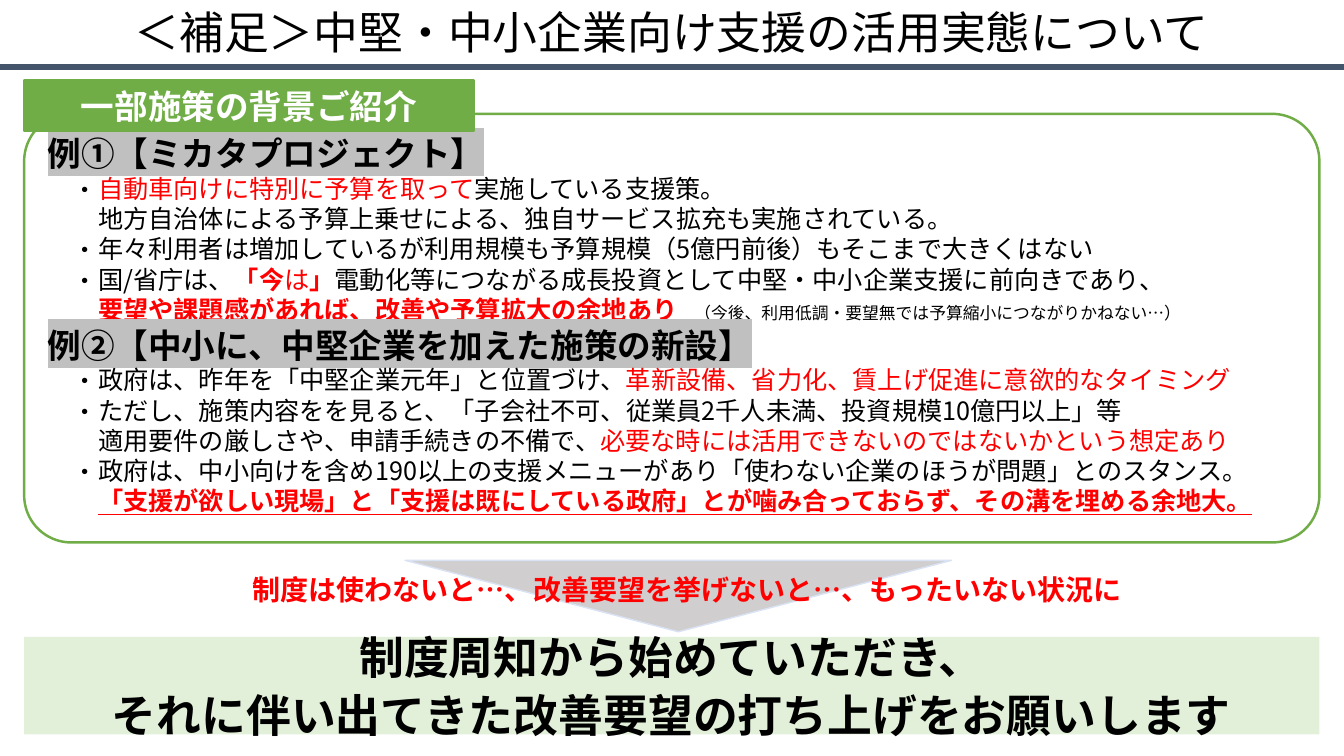
from lxml import etree
from pptx import Presentation
from pptx.dml.color import RGBColor
from pptx.enum.shapes import MSO_CONNECTOR, MSO_SHAPE
from pptx.enum.text import MSO_ANCHOR, MSO_AUTO_SIZE, PP_ALIGN
from pptx.oxml.ns import qn
from pptx.util import Cm, Pt

STRAIGHT = MSO_CONNECTOR.STRAIGHT
RECTANGLE = MSO_SHAPE.RECTANGLE
ROUNDED = MSO_SHAPE.ROUNDED_RECTANGLE
TRIANGLE = MSO_SHAPE.ISOSCELES_TRIANGLE
TOP, MIDDLE = MSO_ANCHOR.TOP, MSO_ANCHOR.MIDDLE
NO_AUTOFIT = MSO_AUTO_SIZE.NONE
LEFT, CENTER = PP_ALIGN.LEFT, PP_ALIGN.CENTER

FONT = "Noto Sans CJK JP"
COLORS = {
    "black": "000000", "white": "FFFFFF", "red": "FF0000", "green": "70AD47",
    "pale_green": "E2F0D9", "gray": "D0CECE", "pale_blue": "DAE3F3",
    "navy": "44546A", "marker": "C0C0C0",
}
MARGIN, PANEL_WIDTH = 0.61, 32.64

PLAIN = {"size": 18}
RED = {"size": 18, "color": "red"}
RED_BOLD = {**RED, "bold": True}
RED_KEY = {**RED_BOLD, "underline": True}
HEADING = {"size": 24, "bold": True, "marker": True}
NOTE = {"size": 12}

EXAMPLES = [
    ("heading", [("例①【ミカタプロジェクト】", HEADING)]),
    ("bullet", [("自動車向けに特別に予算を取って", RED), ("実施している支援策。", PLAIN)]),
    ("more", [("地方自治体による予算上乗せによる、独自サービス拡充も実施されている。", PLAIN)]),
    ("bullet", [("年々利用者は増加しているが利用規模も予算規模（5億円前後）もそこまで大きくはない", PLAIN)]),
    ("bullet", [("国/省庁は、", PLAIN), ("「今", RED_BOLD), ("は", RED), ("」", RED_BOLD),
                ("電動化等につながる成長投資として中堅・中小企業支援に前向きであり、", PLAIN)]),
    ("more", [("要望や課題感があれば、改善や予算拡大の余地あり", RED_KEY),
              ("　（今後、利用低調・要望無では予算縮小につながりかねない…）", NOTE)]),
    ("heading", [("例②【中小に、中堅企業を加えた施策の新設】", HEADING)]),
    ("bullet", [("政府は、昨年を「中堅企業元年」と位置づけ、", PLAIN),
                ("革新設備、省力化、賃上げ促進に意欲的なタイミング", RED)]),
    ("bullet", [("ただし、施策内容をを見ると、「子会社不可、従業員2千人未満、投資規模10億円以上」等", PLAIN)]),
    ("more", [("適用要件の厳しさや、申請手続きの不備で、", PLAIN),
              ("必要な時には活用できないのではないかという想定あり", RED)]),
    ("bullet", [("政府は、中小向けを含め190以上の支援メニューがあり「使わない企業のほうが問題」とのスタンス。", PLAIN)]),
    ("more", [("「支援が欲しい現場」と「支援は既にしている政府」とが噛み合っておらず、その溝を埋める余地大。", RED_KEY)]),
]


def rgb(name):
    """Return the named colour."""
    return RGBColor.from_string(COLORS[name])


def add_run(paragraph, text, size, color="black", bold=False, underline=False, marker=False):
    """Add one formatted run to a paragraph."""
    run = paragraph.add_run()
    run.text = text
    font = run.font
    font.size, font.bold, font.underline, font.name = Pt(size), bold, underline, FONT
    font.color.rgb = rgb(color)
    properties = run._r.get_or_add_rPr()
    latin = properties.find(qn("a:latin"))
    east_asian = etree.Element(qn("a:ea"), typeface=FONT)
    latin.addnext(east_asian)
    if marker:
        highlight = etree.Element(qn("a:highlight"))
        etree.SubElement(highlight, qn("a:srgbClr"), val=COLORS["marker"])
        latin.addprevious(highlight)


def set_indent(paragraph, kind):
    """Give a paragraph the indent and bullet of its kind."""
    left = 0 if kind == "heading" else Cm(1.27)
    hanging = Cm(-0.635) if kind == "bullet" else 0
    properties = paragraph._p.get_or_add_pPr()
    properties.set("marL", str(left))
    properties.set("indent", str(hanging))
    if kind == "bullet":
        bullet_color = etree.SubElement(properties, qn("a:buClr"))
        etree.SubElement(bullet_color, qn("a:srgbClr"), val=COLORS["black"])
        etree.SubElement(properties, qn("a:buFont"), typeface=FONT)
        etree.SubElement(properties, qn("a:buChar"), char="・")
    else:
        etree.SubElement(properties, qn("a:buNone"))


def set_frame(frame, anchor, inset=0.0):
    """Set wrapping, anchor and insets of a text frame."""
    frame.word_wrap = True
    frame.auto_size = NO_AUTOFIT
    frame.vertical_anchor = anchor
    frame.margin_left = frame.margin_right = Cm(inset)
    frame.margin_top = frame.margin_bottom = 0


def write_lines(frame, lines, style, after=0):
    """Write centred lines in one style."""
    for index, line in enumerate(lines):
        paragraph = frame.add_paragraph() if index else frame.paragraphs[0]
        paragraph.alignment = CENTER
        paragraph.space_after = Pt(after)
        add_run(paragraph, line, **style)


def place(placeholder, left, top, width, height):
    """Move and size a placeholder."""
    placeholder.left, placeholder.top = Cm(left), Cm(top)
    placeholder.width, placeholder.height = Cm(width), Cm(height)


def add_panel(slide, preset, box, fill=None, line=None, line_width=1):
    """Add a preset shape with a plain fill and line."""
    panel = slide.shapes.add_shape(preset, *map(Cm, box))
    panel.shadow.inherit = False
    if fill:
        panel.fill.solid()
        panel.fill.fore_color.rgb = rgb(fill)
    else:
        panel.fill.background()
    if line:
        panel.line.color.rgb = rgb(line)
        panel.line.width = Pt(line_width)
    else:
        panel.line.fill.background()
    return panel


def add_title(slide, text):
    """Fill the title and draw the rule under it."""
    title = slide.shapes.title
    place(title, 0, -0.03, 33.87, 1.63)
    set_frame(title.text_frame, MIDDLE)
    write_lines(title.text_frame, [text], {"size": 32})
    rule = slide.shapes.add_connector(STRAIGHT, 0, Cm(1.68), Cm(33.87), Cm(1.68))
    rule.line.color.rgb = rgb("navy")
    rule.line.width = Pt(4.5)
    etree.SubElement(rule._element.spPr, qn("a:effectLst"))


def add_examples(slide):
    """Write the two examples inside a rounded outline."""
    body = slide.placeholders[1]
    place(body, 1.2, 3.35, 31.45, 9.9)
    set_frame(body.text_frame, TOP)
    for index, (kind, runs) in enumerate(EXAMPLES):
        paragraph = body.text_frame.add_paragraph() if index else body.text_frame.paragraphs[0]
        paragraph.alignment = LEFT
        paragraph.space_before = Pt(0)
        set_indent(paragraph, kind)
        for text, style in runs:
            add_run(paragraph, text, **style)
    outline = add_panel(slide, ROUNDED, (MARGIN, 2.87, PANEL_WIDTH, 10.8), line="green", line_width=1.75)
    outline.adjustments[0] = 0.11


def add_label(slide, text):
    """Add the green label on the outline."""
    label = add_panel(slide, RECTANGLE, (MARGIN, 2.03, 11.33, 1.27), "green", "green", 1.5)
    set_frame(label.text_frame, MIDDLE, 0.25)
    write_lines(label.text_frame, [text], {"size": 24, "color": "white", "bold": True})


def add_warning(slide, text):
    """Add the downward triangle and the warning across it."""
    triangle = add_panel(slide, TRIANGLE, (10.21, 14.12, 13.77, 1.8), "gray", "pale_blue")
    triangle.rotation = 180
    warning = slide.shapes.add_textbox(Cm(5.41), Cm(14.3), Cm(23.83), Cm(1.12))
    set_frame(warning.text_frame, MIDDLE, 0.25)
    write_lines(warning.text_frame, [text], {"size": 20, "color": "red", "bold": True})


def add_request(slide, lines):
    """Add the closing request in its pale band."""
    band = add_panel(slide, RECTANGLE, (MARGIN, 16.05, PANEL_WIDTH, 2.46), "pale_green")
    set_frame(band.text_frame, MIDDLE, 0.25)
    write_lines(band.text_frame, lines, {"size": 32, "bold": True}, after=3)


def main():
    """Build the slide and save it."""
    deck = Presentation()
    deck.slide_width, deck.slide_height = Cm(33.87), Cm(19.05)
    slide = deck.slides.add_slide(deck.slide_layouts[1])
    add_warning(slide, "制度は使わないと…、改善要望を挙げないと…、もったいない状況に")
    add_title(slide, "＜補足＞中堅・中小企業向け支援の活用実態について")
    add_request(slide, ["制度周知から始めていただき、", "それに伴い出てきた改善要望の打ち上げをお願いします"])
    add_examples(slide)
    add_label(slide, "一部施策の背景ご紹介")
    deck.save("out.pptx")


if __name__ == "__main__":
    main()
